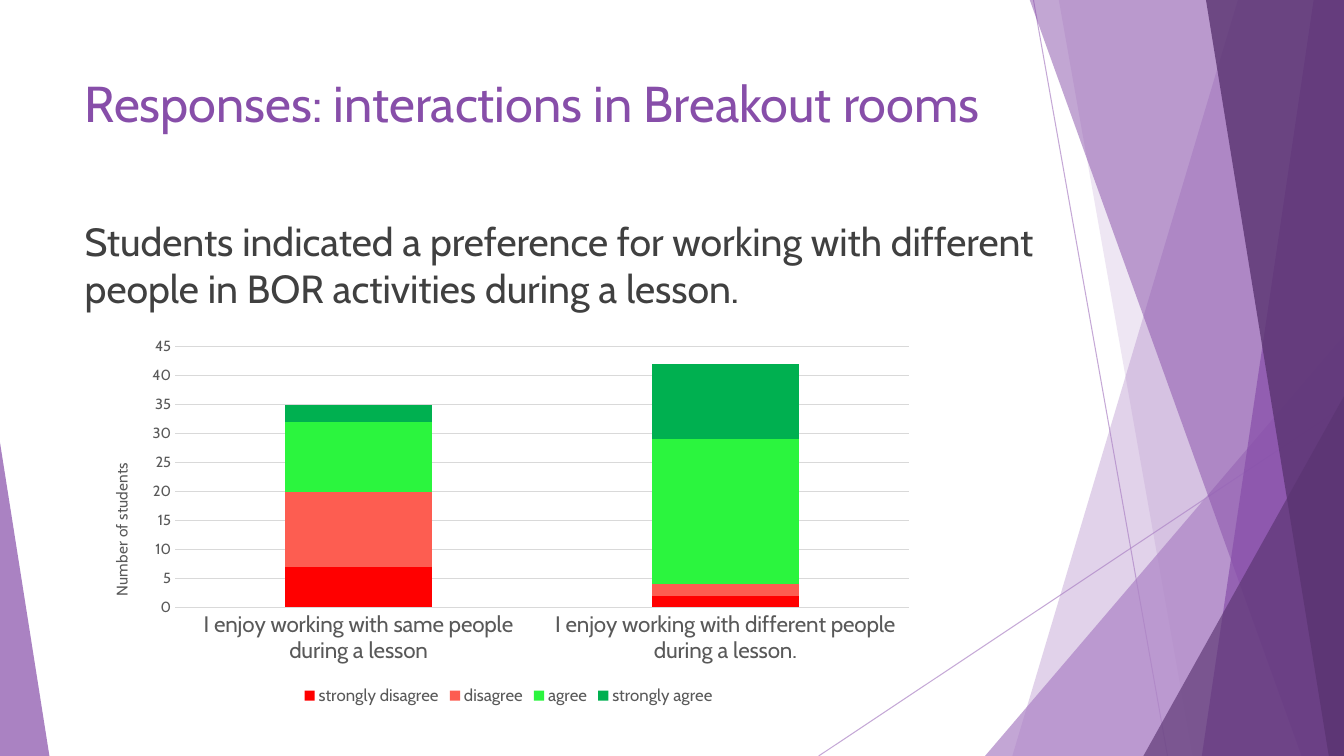
from lxml.etree import SubElement
from pptx import Presentation
from pptx.chart.data import CategoryChartData
from pptx.dml.color import RGBColor
from pptx.enum.chart import XL_CHART_TYPE, XL_LEGEND_POSITION, XL_TICK_MARK
from pptx.enum.shapes import MSO_CONNECTOR, MSO_SHAPE
from pptx.enum.text import MSO_ANCHOR, MSO_AUTO_SIZE, PP_ALIGN
from pptx.oxml import parse_xml
from pptx.oxml.ns import nsdecls, qn
from pptx.util import Pt

PX = 9144
WIDE, HIGH = 1333, 750
FONT = "Cabin"
INK = {
    "lilac": "AD84C6",
    "purple": "874EA9",
    "plum": "5A3471",
    "text": "404040",
    "label": "595959",
    "grid": "D9D9D9",
}
LINES = [(1025, 0, 1158, HIGH), (WIDE, 403, 812, HIGH)]
BANDS = [
    (1228, 1004, "lilac", 36),
    (1050, 1183, "lilac", 20),
    (977, 333, 356, 1, "lilac", 72),
    (1021, 1291, "purple", 50),
    (1303, 1192, "purple", 70),
    (1196, 1318, "plum", 80),
    (1134, 393, 199, 1, "plum", 66),
    (0, 439, 49, 0, "purple", 70),
]
CATS = [
    "I enjoy working with same people during a lesson",
    "I enjoy working with different people during a lesson.",
]
SERIES = [
    ("strongly disagree", (7, 2), "FF0000"),
    ("disagree", (13, 2), "FD5D51"),
    ("agree", (12, 25), "2BF53E"),
    ("strongly agree", (3, 13), "00B050"),
]


def px(*vals):
    return [val * PX for val in vals]


def rgb(name):
    return RGBColor.from_string(INK.get(name, name))


def fade(shape, alpha):
    tint = shape.element.spPr.find(".//" + qn("a:srgbClr"))
    SubElement(tint, qn("a:alpha")).set("val", str(alpha * 1000))


def paint(shape, color, alpha):
    shape.shadow.inherit = False
    shape.fill.solid()
    shape.fill.fore_color.rgb = rgb(color)
    shape.line.fill.background()
    fade(shape, alpha)


def add_line(slide, ends):
    line = slide.shapes.add_connector(MSO_CONNECTOR.STRAIGHT, *px(*ends))
    line.line.color.rgb = rgb("lilac")
    line.line.width = Pt(0.75)
    fade(line, 70)
    SubElement(line.element.spPr, qn("a:effectLst"))


def add_band(slide, top, foot, color, alpha):
    pen = slide.shapes.build_freeform(top, -1, scale=PX)
    pen.add_line_segments([(WIDE, -1), (WIDE, HIGH), (foot, HIGH)], close=True)
    paint(pen.convert_to_shape(), color, alpha)


def add_peak(slide, left, top, width, tip, color, alpha):
    peak = slide.shapes.add_shape(
        MSO_SHAPE.ISOSCELES_TRIANGLE, *px(left, top, width, HIGH - top))
    peak.adjustments[0] = tip
    paint(peak, color, alpha)


def set_font(font, size, color):
    font.name = FONT
    font.size = Pt(size)
    font.bold = False
    font.color.rgb = rgb(color)


def fill_text(holder, box, text, size, color):
    holder.left, holder.top, holder.width, holder.height = px(*box)
    frame = holder.text_frame
    frame.text = text
    frame.word_wrap = True
    frame.auto_size = MSO_AUTO_SIZE.NONE
    frame.vertical_anchor = MSO_ANCHOR.TOP
    para = frame.paragraphs[0]
    para.alignment = PP_ALIGN.LEFT
    set_font(para.runs[0].font, size, color)
    return para


def drop_bullet(para):
    props = para._p.get_or_add_pPr()
    props.set("marL", "0")
    props.set("indent", "0")
    SubElement(props, qn("a:buNone"))


def set_layout(node, index, **parts):
    for old in node.findall(qn("c:layout")):
        node.remove(old)
    tags = "".join(f'<c:{tag} val="{val}"/>' for tag, val in parts.items())
    node.insert(index, parse_xml(
        f'<c:layout {nsdecls("c")}><c:manualLayout>{tags}'
        '</c:manualLayout></c:layout>'))


def style_axis(axis, size):
    axis.major_tick_mark = XL_TICK_MARK.NONE
    axis.minor_tick_mark = XL_TICK_MARK.NONE
    set_font(axis.tick_labels.font, size, "label")


def style_line(line):
    line.color.rgb = rgb("grid")
    line.width = Pt(0.75)


def name_axis(axis, text):
    title = axis.axis_title
    frame = title.text_frame
    frame.text = text
    set_font(frame.paragraphs[0].runs[0].font, 11, "label")
    body = title.element.find(".//" + qn("a:bodyPr"))
    body.set("rot", "-5400000")
    body.set("vert", "horz")
    set_layout(title.element, 1, xMode="edge", yMode="edge", x=0.02, y=0.34)


def add_bars(slide):
    data = CategoryChartData()
    data.categories = CATS
    for name, vals, _ in SERIES:
        data.add_series(name, vals)
    chart = slide.shapes.add_chart(
        XL_CHART_TYPE.COLUMN_STACKED, *px(91, 329, 827, 375), data).chart
    set_font(chart.font, 10, "000000")
    chart.has_title = False
    plot = chart.plots[0]
    plot.gap_width = 150
    plot.overlap = 100
    plot.vary_by_categories = False
    for bar, (_, _, color) in zip(plot.series, SERIES):
        bar.format.fill.solid()
        bar.format.fill.fore_color.rgb = rgb(color)
    style_axis(chart.category_axis, 16)
    style_line(chart.category_axis.format.line)
    axis = chart.value_axis
    style_axis(axis, 10.5)
    axis.minimum_scale, axis.maximum_scale, axis.major_unit = 0, 45, 5
    axis.format.line.fill.background()
    style_line(axis.major_gridlines.format.line)
    name_axis(axis, "Number of students")
    chart.has_legend = True
    chart.legend.position = XL_LEGEND_POSITION.BOTTOM
    chart.legend.include_in_layout = False
    set_font(chart.legend.font, 12, "label")
    set_layout(chart.element.find(".//" + qn("c:plotArea")), 0,
               layoutTarget="inner", xMode="edge", yMode="edge",
               x=0.1, y=0.04, w=0.88, h=0.69)


def main():
    deck = Presentation()
    deck.slide_width, deck.slide_height = px(WIDE, HIGH)
    slide = deck.slides.add_slide(deck.slide_layouts[1])
    title, body = slide.placeholders
    for ends in LINES:
        add_line(slide, ends)
    for band in BANDS:
        draw = add_band if len(band) == 4 else add_peak
        draw(slide, *band)
    for holder in (title, body):
        holder.element.getparent().append(holder.element)
    fill_text(title, (74, 67, 940, 144),
              "Responses: interactions in Breakout rooms", 36, "purple")
    para = fill_text(
        body, (74, 211, 1037, 450),
        "Students indicated a preference for working with different people "
        "in BOR activities during a lesson.", 28, "text")
    para.space_before = Pt(10)
    drop_bullet(para)
    add_bars(slide)
    deck.save("out.pptx")


if __name__ == "__main__":
    main()
